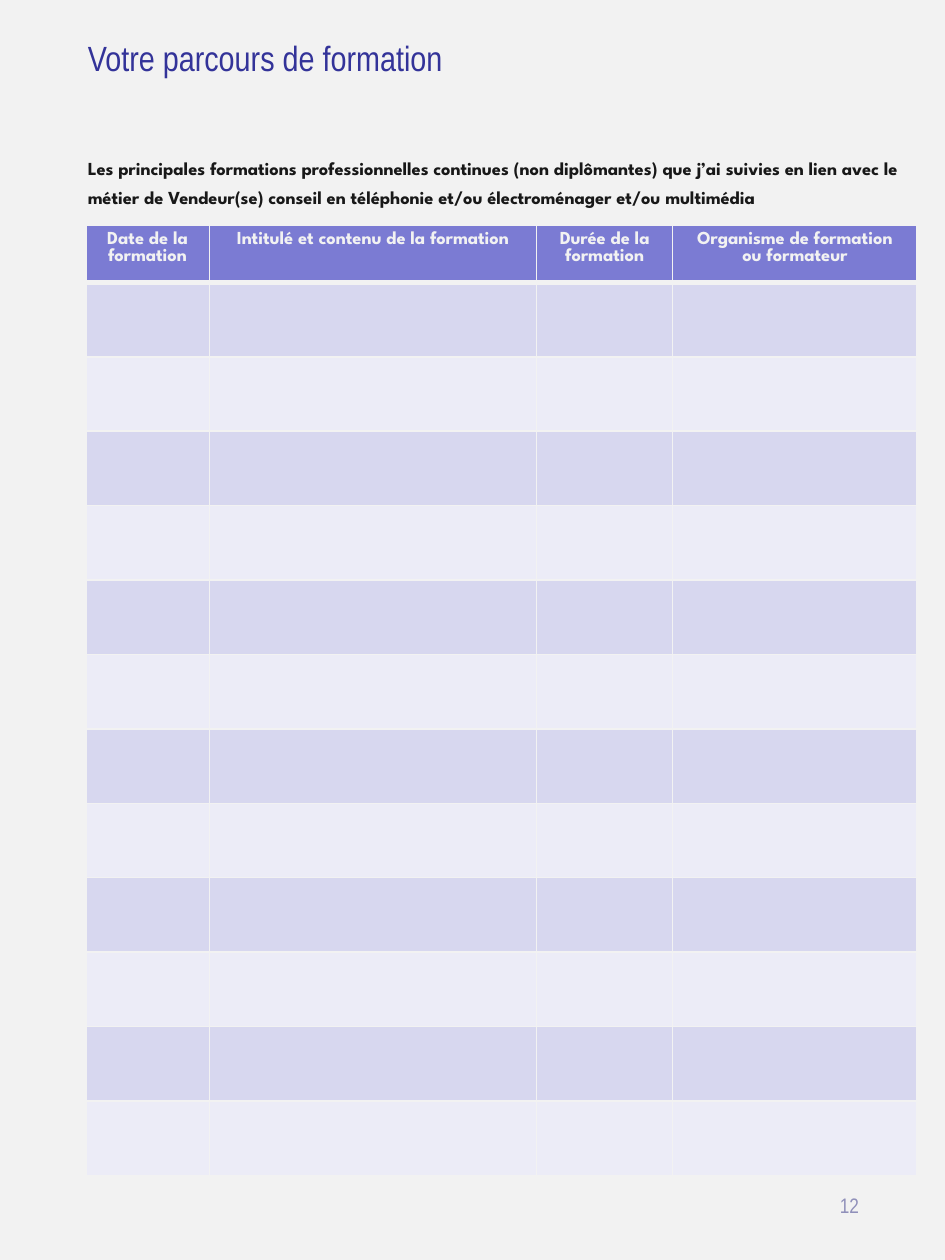
from lxml import etree
from pptx import Presentation
from pptx.dml.color import RGBColor
from pptx.enum import text as t
from pptx.oxml import ns
from pptx.util import Cm, Pt

PAPER = RGBColor(0xF2, 0xF2, 0xF2)
TITLE_BLUE = RGBColor(0x33, 0x33, 0x99)
INK = RGBColor(0x18, 0x18, 0x18)
NUMBER_GREY = RGBColor(0x90, 0x90, 0xBA)
HEADER_FILL = RGBColor(0x7B, 0x7B, 0xD3)
BAND_FILLS = (RGBColor(0xD7, 0xD7, 0xEF), RGBColor(0xEC, 0xEC, 0xF7))

TITLE = "Votre parcours de formation"
INTRO = ("Les principales formations professionnelles continues (non diplômantes) "
         "que j’ai suivies en lien avec le métier de Vendeur(se) conseil en "
         "téléphonie et/ou électroménager et/ou multimédia")
PAGE_NUMBER = "12"
COLUMNS = [  # heading, width in cm
    ("Date de la formation", 2.49),
    ("Intitulé et contenu de la formation", 6.6),
    ("Durée de la formation", 2.74),
    ("Organisme de formation ou formateur", 4.93),
]
ENTRY_ROWS = 12
HEADER_HEIGHT, ENTRY_HEIGHT = 1.04, 1.5


def write(frame, words, *, size, color, font="Arial Narrow", bold=False,
          align=t.PP_ALIGN.LEFT, spacing=None):
    paragraph = frame.paragraphs[0]
    paragraph.alignment = align
    paragraph.line_spacing = spacing
    run = paragraph.add_run()
    run.text = words
    run.font.name, run.font.size, run.font.bold = font, Pt(size), bold
    run.font.color.rgb = color


def add_box(slide, left, top, width, height, anchor=t.MSO_ANCHOR.MIDDLE):
    box = slide.shapes.add_textbox(Cm(left), Cm(top), Cm(width), Cm(height))
    frame = box.text_frame
    frame.word_wrap = True
    frame.vertical_anchor = anchor
    return frame


def style_cell(cell, fill, bottom_width=1):
    cell.fill.solid()
    cell.fill.fore_color.rgb = fill
    properties = cell._tc.get_or_add_tcPr()
    widths = {"lnL": 1, "lnR": 1, "lnT": 1, "lnB": bottom_width}
    for position, (side, width) in enumerate(widths.items()):
        line = etree.Element(ns.qn(f"a:{side}"), w=str(Pt(width)))
        solid = etree.SubElement(line, ns.qn("a:solidFill"))
        etree.SubElement(solid, ns.qn("a:srgbClr"), val=str(PAPER))
        properties.insert(position, line)  # borders come before the fill


def add_training_table(slide):
    total_width = sum(width for _, width in COLUMNS)
    total_height = HEADER_HEIGHT + ENTRY_ROWS * ENTRY_HEIGHT
    table = slide.shapes.add_table(
        ENTRY_ROWS + 1, len(COLUMNS), Cm(1.73), Cm(4.55),
        Cm(total_width), Cm(total_height)).table
    for row_number, row in enumerate(table.rows):
        row.height = Cm(ENTRY_HEIGHT if row_number else HEADER_HEIGHT)
        for cell in row.cells:
            if row_number:
                style_cell(cell, BAND_FILLS[(row_number - 1) % 2])
            else:
                style_cell(cell, HEADER_FILL, bottom_width=3)
    for column, (heading, width) in enumerate(COLUMNS):
        table.columns[column].width = Cm(width)
        write(table.cell(0, column).text_frame, heading, size=10.5, color=PAPER,
              font="League Spartan", bold=True, align=t.PP_ALIGN.CENTER)


def main():
    deck = Presentation()
    deck.slide_width, deck.slide_height = Cm(19.05), Cm(25.4)
    slide = deck.slides.add_slide(deck.slide_layouts[6])
    slide.background.fill.solid()
    slide.background.fill.fore_color.rgb = PAPER

    write(add_box(slide, 1.52, 0, 17.15, 2.31), TITLE, size=20, color=TITLE_BLUE)
    write(add_box(slide, 1.52, 2.92, 17, 20.6, t.MSO_ANCHOR.TOP), INTRO, size=10.5,
          color=INK, font="League Spartan", bold=True, spacing=1.3)
    write(add_box(slide, 16.59, 23.62, 1.07, 1.35), PAGE_NUMBER, size=12,
          color=NUMBER_GREY, align=t.PP_ALIGN.CENTER)
    add_training_table(slide)
    deck.save("out.pptx")


if __name__ == "__main__":
    main()
